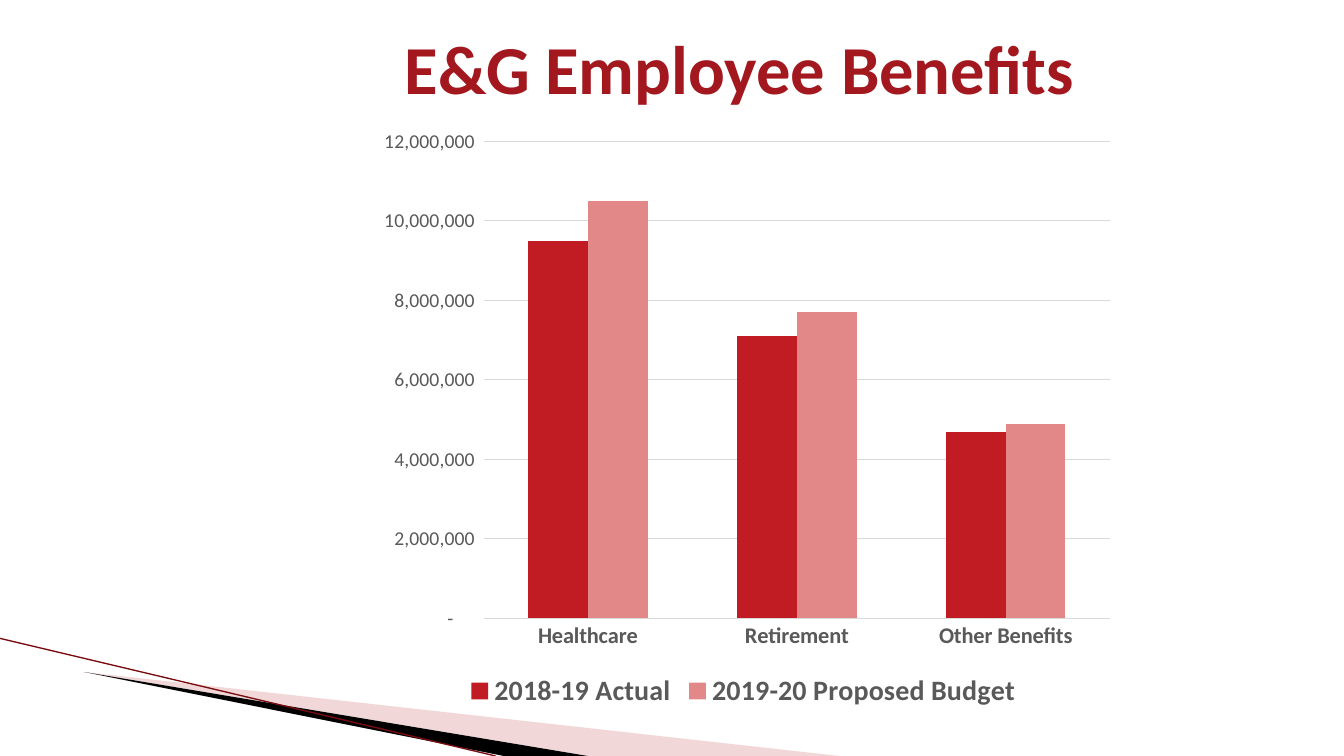
import lxml.etree
import pptx
import pptx.chart.data
import pptx.dml.color
import pptx.enum.chart
import pptx.enum.shapes
import pptx.enum.text
import pptx.oxml
import pptx.oxml.ns
import pptx.util

RGBColor = pptx.dml.color.RGBColor
TITLE_RED = RGBColor(0xA3, 0x17, 0x1E)
ACTUAL_RED = RGBColor(0xC1, 0x1C, 0x24)
BUDGET_PINK = RGBColor(0xE3, 0x88, 0x89)
WEDGE_PINK = RGBColor(0xDD, 0x9D, 0x9D)
EDGE_RED = RGBColor(0x7A, 0x0C, 0x10)
BLACK = RGBColor(0, 0, 0)
LABEL_GRAY = RGBColor(0x59, 0x59, 0x59)
GRID_GRAY = RGBColor(0xD9, 0xD9, 0xD9)
COLUMNS, ROWS = 16, 9
CELL = pptx.util.Inches(7.5) // ROWS
NUMBER_FORMAT = '_(* #,##0_);_(* \\(#,##0\\);_(* "-"??_);_('


def format_font(font, size, color, bold=False, name="Calibri"):
    font.name = name
    font.size = pptx.util.Pt(size)
    font.bold = bold
    font.color.rgb = color


def write_text(frame, text, alignment, **font_format):
    paragraph = frame.paragraphs[0]
    paragraph.alignment = alignment
    run = paragraph.add_run()
    run.text = text
    format_font(run.font, **font_format)


def grid(*lengths):
    return [round(length * CELL) for length in lengths]


class BenefitsSlide:
    def __init__(self, presentation):
        self.slide = presentation.slides.add_slide(presentation.slide_layouts[6])
        self.shapes = self.slide.shapes

    def wedge(self, points, color, opacity=100):
        builder = self.shapes.build_freeform(*points[0], scale=CELL)
        builder.add_line_segments(points[1:], close=True)
        shape = builder.convert_to_shape()
        shape.shadow.inherit = False
        shape.fill.solid()
        shape.fill.fore_color.rgb = color
        shape.line.fill.background()
        if opacity < 100:
            color_element = shape._element.spPr.find(".//" + pptx.oxml.ns.qn("a:srgbClr"))
            alpha = lxml.etree.SubElement(color_element, pptx.oxml.ns.qn("a:alpha"))
            alpha.set("val", str(opacity * 1000))

    def line(self, start, end, color, width):
        connector = self.shapes.add_connector(
            pptx.enum.shapes.MSO_CONNECTOR.STRAIGHT, *grid(*start, *end))
        connector.line.color.rgb = color
        connector.line.width = pptx.util.Pt(width)
        lxml.etree.SubElement(connector._element.spPr, pptx.oxml.ns.qn("a:effectLst"))

    def title(self, text, box):
        frame = self.shapes.add_textbox(*grid(*box)).text_frame
        frame.word_wrap = True
        frame.vertical_anchor = pptx.enum.text.MSO_ANCHOR.MIDDLE
        write_text(frame, text, pptx.enum.text.PP_ALIGN.CENTER,
                   size=49, color=TITLE_RED, bold=True)

    def column_chart(self, box, categories, series, plot_shares):
        data = pptx.chart.data.CategoryChartData(number_format=NUMBER_FORMAT)
        data.categories = categories
        for name, values, _ in series:
            data.add_series(name, values)
        chart = self.shapes.add_chart(
            pptx.enum.chart.XL_CHART_TYPE.COLUMN_CLUSTERED, *grid(*box), data).chart
        format_font(chart.font, 10, BLACK)
        chart.has_title = False
        chart.has_legend = True
        chart.legend.position = pptx.enum.chart.XL_LEGEND_POSITION.BOTTOM
        chart.legend.include_in_layout = False
        format_font(chart.legend.font, 20, LABEL_GRAY, bold=True)

        plot = chart.plots[0]
        plot.gap_width = 150
        plot.overlap = 0
        plot.vary_by_categories = False
        for plotted, (_, _, color) in zip(plot.series, series):
            plotted.format.fill.solid()
            plotted.format.fill.fore_color.rgb = color

        for axis, size, bold in ((chart.category_axis, 16, True), (chart.value_axis, 14, False)):
            axis.major_tick_mark = pptx.enum.chart.XL_TICK_MARK.NONE
            axis.minor_tick_mark = pptx.enum.chart.XL_TICK_MARK.NONE
            axis.format.line.fill.background()
            format_font(axis.tick_labels.font, size, LABEL_GRAY, bold)
        value_axis = chart.value_axis
        value_axis.minimum_scale = 0
        value_axis.maximum_scale = 12000000
        value_axis.major_unit = 2000000
        value_axis.tick_labels.number_format = NUMBER_FORMAT
        value_axis.tick_labels.number_format_is_linked = False
        value_axis.major_gridlines.format.line.color.rgb = GRID_GRAY
        value_axis.major_gridlines.format.line.width = pptx.util.Pt(0.75)
        self.place_plot(chart, plot_shares)

    def place_plot(self, chart, shares):
        plot_area = chart._chartSpace.chart.plotArea
        for layout in plot_area.findall(pptx.oxml.ns.qn("c:layout")):
            plot_area.remove(layout)
        settings = [("layoutTarget", "inner"), ("xMode", "edge"), ("yMode", "edge")]
        settings += zip("xywh", shares)
        layout = pptx.oxml.parse_xml(
            "<c:layout %s><c:manualLayout>%s</c:manualLayout></c:layout>" % (
                pptx.oxml.ns.nsdecls("c"),
                "".join('<c:%s val="%s"/>' % setting for setting in settings)))
        plot_area.insert(0, layout)


def main():
    presentation = pptx.Presentation()
    presentation.slide_width = COLUMNS * CELL
    presentation.slide_height = ROWS * CELL
    slide = BenefitsSlide(presentation)
    slide.wedge([(0.88, 7.81), (9.52, 9), (7.3, 9), (0.88, 7.8)], WEDGE_PINK, opacity=40)
    slide.wedge([(0.85, 7.79), (7.31, 9), (5.95, 9), (0.86, 7.8)], BLACK)
    slide.line((0, 7.6), (5.9, 9), EDGE_RED, 0.95)
    slide.title("E&G Employee Benefits", (4.5, 0.2, 8.6, 1.2))
    slide.column_chart(
        (4.3, 1.4, 9.1, 7.1),
        ["Healthcare", "Retirement", "Other Benefits"],
        [("2018-19 Actual", (9500000, 7100000, 4700000), ACTUAL_RED),
         ("2019-20 Proposed Budget", (10500000, 7700000, 4900000), BUDGET_PINK)],
        (0.16, 0.04, 0.82, 0.8))
    presentation.save("out.pptx")


if __name__ == "__main__":
    main()
